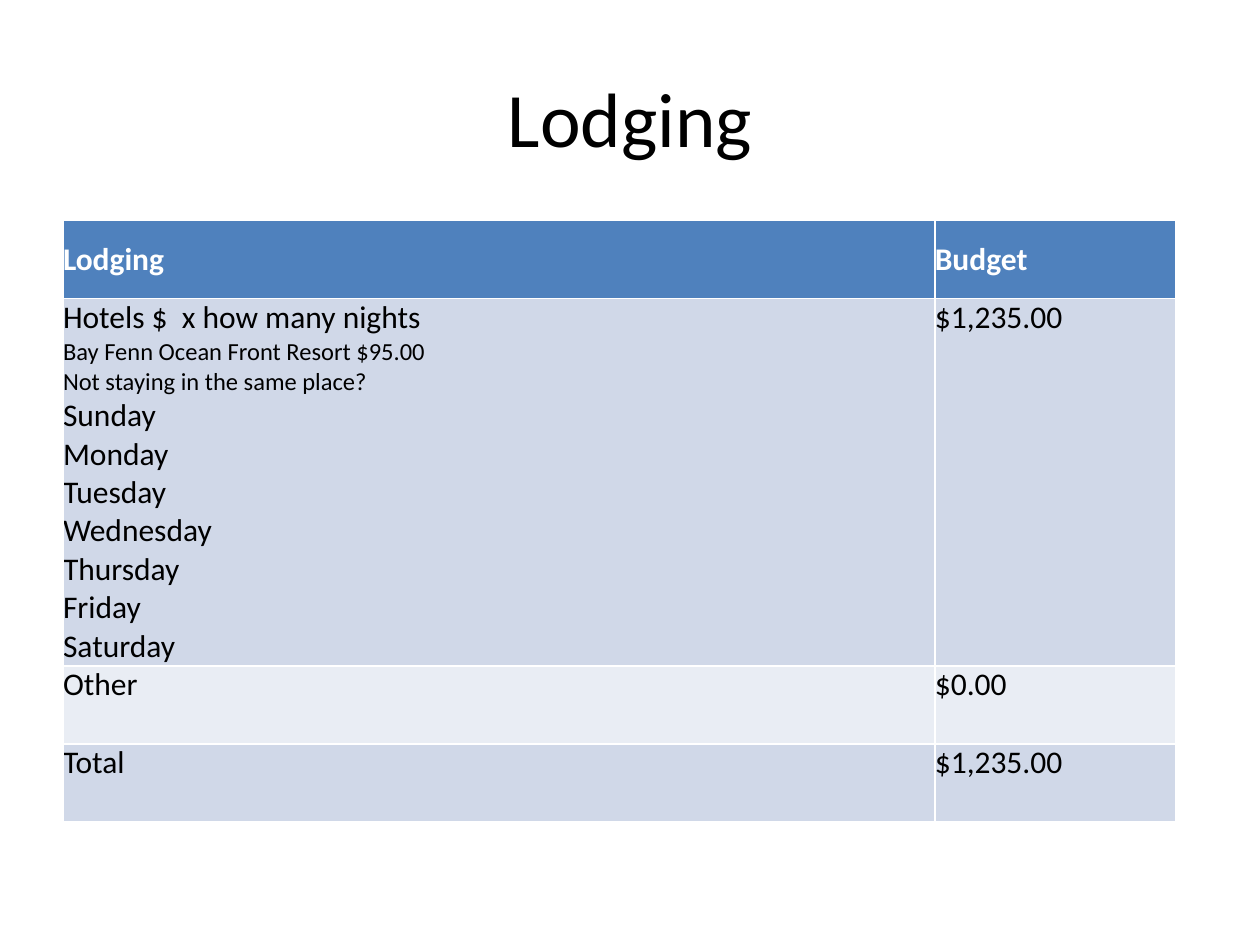
import pptx
import pptx.util
import pptx.dml.color
import pptx.enum.text
from pptx.util import Inches

COLORS = {
    "text": "000000",
    "header_text": "FFFFFF",
    "header": "4F81BD",
    "band_dark": "D0D8E8",
    "band_light": "E9EDF4",
}
ANCHOR = pptx.enum.text.MSO_ANCHOR


def write_text(paragraph, text, size=18, color="text", bold=False, align=None):
    paragraph.alignment = align
    run = paragraph.add_run()
    run.text = text
    run.font.name = "Calibri"
    run.font.size = pptx.util.Pt(size)
    run.font.bold = bold
    run.font.color.rgb = pptx.dml.color.RGBColor.from_string(COLORS[color])


presentation = pptx.Presentation()
presentation.slide_width = Inches(10)
presentation.slide_height = Inches(7.5)
slide = presentation.slides.add_slide(presentation.slide_layouts[5])

# Title
title = slide.shapes.title
title.left, title.top = Inches(0.5), Inches(0.3)
title.width, title.height = Inches(9), Inches(1.25)
title.text_frame.vertical_anchor = ANCHOR.MIDDLE
write_text(title.text_frame.paragraphs[0], "Lodging", size=44,
           align=pptx.enum.text.PP_ALIGN.CENTER)

# Budget rows: each cell is a list of lines
days = ["Sunday", "Monday", "Tuesday", "Wednesday", "Thursday", "Friday", "Saturday"]
small_lines = ["Bay Fenn Ocean Front Resort $95.00", "Not staying in the same place?"]
rows = [
    [["Lodging"], ["Budget"]],
    [["Hotels $  x how many nights"] + small_lines + days, ["$1,235.00"]],
    [["Other"], ["$0.00"]],
    [["Total"], ["$1,235.00"]],
]
row_heights = [0.62, 2.88, 0.62, 0.62]
row_fills = ["header", "band_dark", "band_light", "band_dark"]
column_widths = [6.92, 1.91]

# Table: the default table style supplies the white cell borders
table = slide.shapes.add_table(
    len(rows), len(column_widths), Inches(0.5), Inches(1.75),
    Inches(sum(column_widths)), Inches(sum(row_heights))).table
for column, width in zip(table.columns, column_widths):
    column.width = Inches(width)

for row_index, row in enumerate(rows):
    is_header = row_index == 0
    table.rows[row_index].height = Inches(row_heights[row_index])
    for column_index, lines in enumerate(row):
        cell = table.cell(row_index, column_index)
        cell.margin_left = cell.margin_right = 0
        cell.margin_top = cell.margin_bottom = 0
        cell.vertical_anchor = ANCHOR.MIDDLE if is_header else ANCHOR.TOP
        cell.fill.solid()
        cell.fill.fore_color.rgb = pptx.dml.color.RGBColor.from_string(
            COLORS[row_fills[row_index]])
        for line_index, line in enumerate(lines):
            frame = cell.text_frame
            paragraph = frame.add_paragraph() if line_index else frame.paragraphs[0]
            write_text(paragraph, line, size=14 if line in small_lines else 18,
                       color="header_text" if is_header else "text", bold=is_header)

presentation.save("out.pptx")
